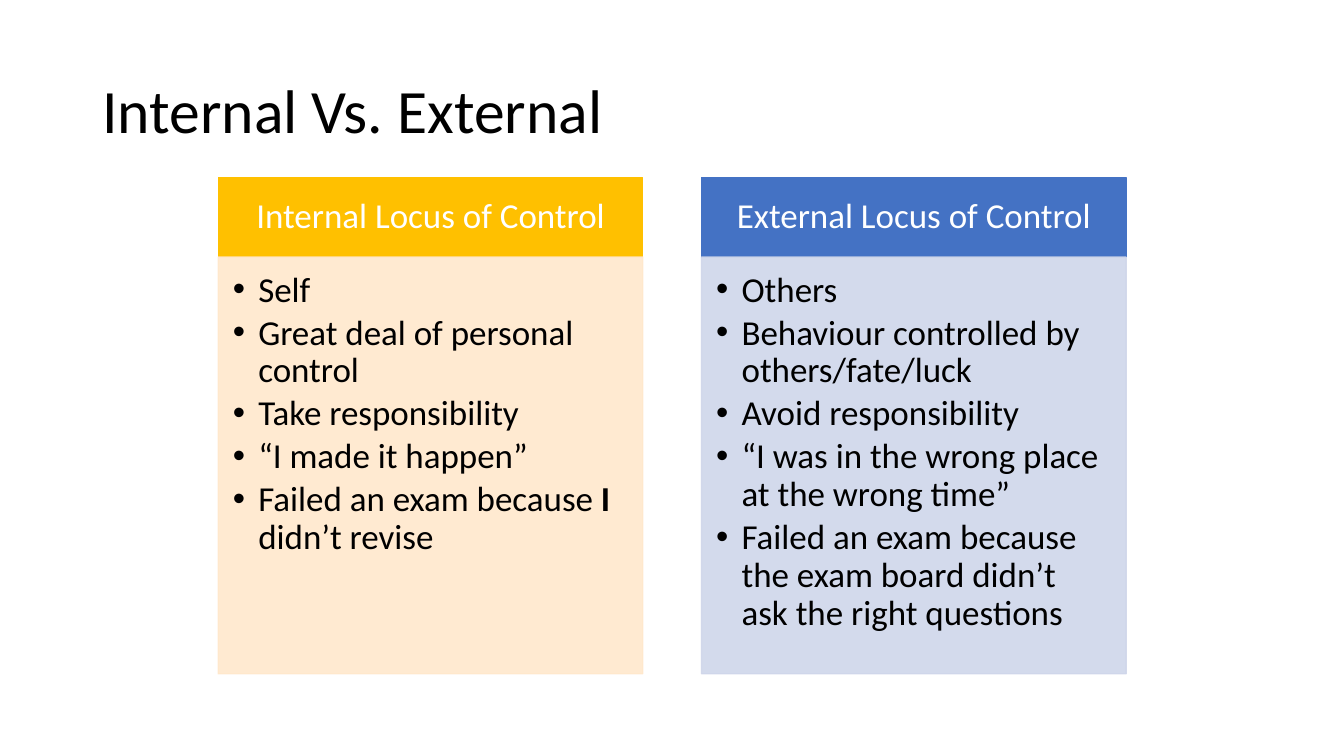
from dataclasses import dataclass

from lxml import etree
from pptx import Presentation
from pptx.dml.color import RGBColor
from pptx.enum.shapes import MSO_SHAPE
from pptx.enum.text import MSO_ANCHOR, PP_ALIGN
from pptx.oxml.ns import qn
from pptx.shapes.autoshape import Shape
from pptx.slide import Slide
from pptx.text.text import TextFrame, _Paragraph
from pptx.util import Cm, Pt

RECTANGLE = MSO_SHAPE.RECTANGLE
TOP, MIDDLE = MSO_ANCHOR.TOP, MSO_ANCHOR.MIDDLE
LEFT, CENTER = PP_ALIGN.LEFT, PP_ALIGN.CENTER

BLACK = RGBColor(0x00, 0x00, 0x00)
WHITE = RGBColor(0xFF, 0xFF, 0xFF)
GOLD = RGBColor(0xFF, 0xC0, 0x00)
PALE_GOLD = RGBColor(0xFF, 0xE8, 0xCC)
BLUE = RGBColor(0x44, 0x72, 0xC4)
PALE_BLUE = RGBColor(0xCF, 0xD6, 0xEA)

FONT = "Calibri"
COLUMN_LEFT, COLUMN_WIDTH, COLUMN_STEP = 5.5, 10.7, 12.18
HEADER_TOP, HEADER_HEIGHT, BODY_HEIGHT = 4.48, 2.0, 10.5
BULLET_INDENT = Cm(0.64)
BODY_OPACITY = 90


@dataclass(frozen=True)
class Column:
    heading: str
    header_color: RGBColor
    body_color: RGBColor
    points: tuple[tuple[str, ...], ...]  # every second part of a point is bold


COLUMNS = (
    Column("Internal Locus of Control", GOLD, PALE_GOLD, (
        ("Self",),
        ("Great deal of personal control",),
        ("Take responsibility",),
        ("“I made it happen”",),
        ("Failed an exam because ", "I", " didn’t revise"),
    )),
    Column("External Locus of Control", BLUE, PALE_BLUE, (
        ("Others",),
        ("Behaviour controlled by others/fate/luck",),
        ("Avoid responsibility",),
        ("“I was in the wrong place at the wrong time”",),
        ("Failed an exam because the exam board didn’t ask the right questions",),
    )),
)


def set_frame(frame: TextFrame, anchor: MSO_ANCHOR,
              insets: tuple[float, float, float, float]) -> None:
    """Wrap the text and set its anchor and its left, top, right, bottom insets in cm."""
    frame.word_wrap = True
    frame.vertical_anchor = anchor
    (frame.margin_left, frame.margin_top,
     frame.margin_right, frame.margin_bottom) = map(Cm, insets)


def set_style(paragraph: _Paragraph, size: float, color: RGBColor,
              alignment: PP_ALIGN = LEFT) -> None:
    paragraph.alignment = alignment
    paragraph.line_spacing = 0.9
    paragraph.font.name = FONT
    paragraph.font.size = Pt(size)
    paragraph.font.color.rgb = color


def add_bullet(paragraph: _Paragraph) -> None:
    properties = paragraph._p.get_or_add_pPr()
    properties.set("marL", str(BULLET_INDENT))
    properties.set("indent", str(-BULLET_INDENT))
    etree.SubElement(properties, qn("a:buFont"), typeface="Arial")
    etree.SubElement(properties, qn("a:buChar"), char="•")


def add_panel(slide: Slide, left: float, top: float, height: float,
              color: RGBColor) -> Shape:
    panel = slide.shapes.add_shape(
        RECTANGLE, Cm(left), Cm(top), Cm(COLUMN_WIDTH), Cm(height))
    panel.shadow.inherit = False
    panel.fill.solid()
    panel.fill.fore_color.rgb = color
    panel.line.color.rgb = color
    panel.line.width = Pt(1)
    return panel


def set_opacity(panel: Shape, percent: int) -> None:
    """Make both fill and outline partly transparent."""
    for color in panel._element.spPr.iter(qn("a:srgbClr")):
        etree.SubElement(color, qn("a:alpha"), val=str(percent * 1000))


def add_title(slide: Slide, text: str) -> None:
    title = slide.shapes.add_textbox(Cm(2.33), Cm(1.01), Cm(29.21), Cm(3.68))
    set_frame(title.text_frame, MIDDLE, (0.25, 0.13, 0.25, 0.13))
    paragraph = title.text_frame.paragraphs[0]
    paragraph.text = text
    set_style(paragraph, 44, BLACK)


def add_column(slide: Slide, column: Column, left: float) -> None:
    header = add_panel(slide, left, HEADER_TOP, HEADER_HEIGHT, column.header_color)
    set_frame(header.text_frame, MIDDLE, (0.48, 0.28, 0.48, 0.28))
    heading = header.text_frame.paragraphs[0]
    heading.text = column.heading
    set_style(heading, 25, WHITE, CENTER)

    body = add_panel(slide, left, HEADER_TOP + HEADER_HEIGHT, BODY_HEIGHT,
                     column.body_color)
    set_opacity(body, BODY_OPACITY)
    frame = body.text_frame
    set_frame(frame, TOP, (0.37, 0.37, 0.48, 0.56))
    for index, parts in enumerate(column.points):
        paragraph = frame.add_paragraph() if index else frame.paragraphs[0]
        add_bullet(paragraph)
        set_style(paragraph, 25, BLACK)
        paragraph.space_after = Pt(3.75)
        for position, part in enumerate(parts):
            run = paragraph.add_run()
            run.text = part
            if position % 2:
                run.font.bold = True


def main() -> None:
    presentation = Presentation()
    presentation.slide_width = Cm(33.87)
    presentation.slide_height = Cm(19.05)
    slide = presentation.slides.add_slide(presentation.slide_layouts[6])
    add_title(slide, "Internal Vs. External")
    for index, column in enumerate(COLUMNS):
        add_column(slide, column, COLUMN_LEFT + index * COLUMN_STEP)
    presentation.save("out.pptx")


if __name__ == "__main__":
    main()
